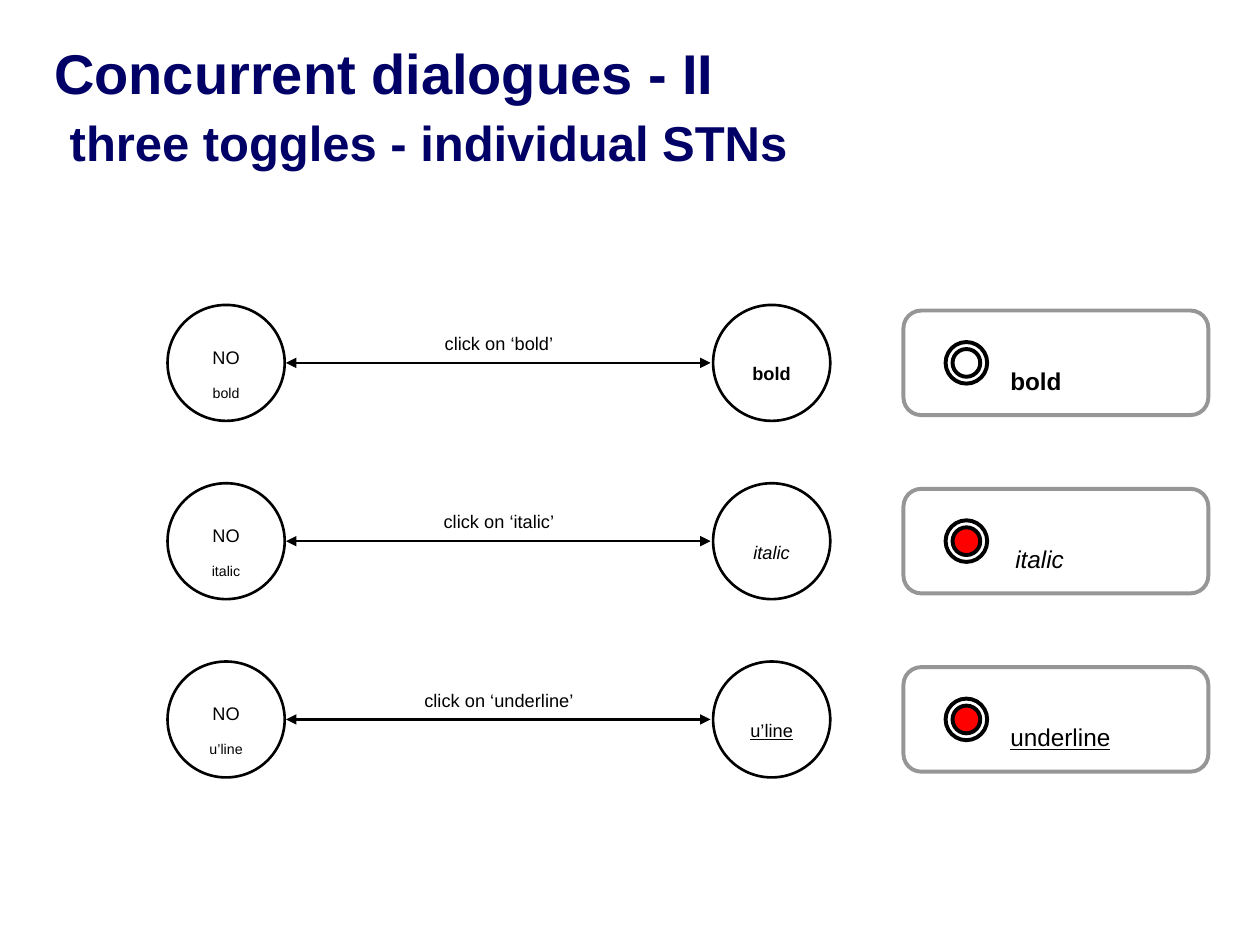
from lxml.etree import SubElement
from pptx import Presentation
from pptx.dml.color import RGBColor
from pptx.enum.shapes import MSO_CONNECTOR, MSO_SHAPE
from pptx.enum.text import MSO_ANCHOR, MSO_AUTO_SIZE, PP_ALIGN
from pptx.oxml.ns import qn
from pptx.util import Inches, Pt

NAVY = RGBColor(0x00, 0x00, 0x66)
BLACK = RGBColor(0x00, 0x00, 0x00)
WHITE = RGBColor(0xFF, 0xFF, 0xFF)
GREY = RGBColor(0x96, 0x96, 0x96)
RED = RGBColor(0xFF, 0x00, 0x00)

# Grid: 10 columns by 7.5 rows of square cells
COLUMNS, ROWS = 10, 7.5
FIRST_CENTRE, LAST_CENTRE = 2.88, 5.71
STATE_WIDTH, STATE_HEIGHT = 0.93, 0.92
OFF_LEFT, ON_LEFT = 1.33, 5.66
PANEL_LEFT, PANEL_WIDTH, PANEL_HEIGHT = 7.17, 2.42, 0.83
RADIO_CENTRE = 7.67
ARROW_CENTRE = 3.96

# Style, short name, full name, lamp colour, panel label (left, width), event width
TOGGLES = [
    ("bold", "bold", "bold", WHITE, (7.92, 0.9), 1.69),
    ("italic", "italic", "italic", RED, (7.96, 0.87), 1.72),
    ("underline", "u’line", "underline", RED, (7.92, 1.58), 2.24),
]


class DiagramSlide:
    font_name = "Arial"

    def __init__(self, deck):
        self.page = deck.slides.add_slide(deck.slide_layouts[5])
        self.cell = deck.slide_width / COLUMNS
        self.parent = self.page.shapes

    def place(self, *lengths):
        return [round(length * self.cell) for length in lengths]

    def start_group(self):
        self.parent = self.page.shapes.add_group_shape().shapes

    def add_span(self, para, text, size, color=BLACK, style=None, lowered=True):
        span = para.add_run()
        span.text = text
        font = span.font
        font.name, font.size = self.font_name, Pt(size)
        font.color.rgb = color
        if style:
            setattr(font, style, True)
        if lowered:
            span._r.get_or_add_rPr().set("baseline", "-25000")

    def title(self, heading, subheading):
        box = self.page.shapes.title
        box.left, box.top, box.width, box.height = self.place(0.33, 0.33, 9.42, 1.09)
        frame = box.text_frame
        frame.auto_size = MSO_AUTO_SIZE.NONE
        frame.vertical_anchor = MSO_ANCHOR.BOTTOM
        para = frame.paragraphs[0]
        para.alignment = PP_ALIGN.LEFT
        self.add_span(para, heading, 32, NAVY, "bold", lowered=False)
        para.add_line_break()
        self.add_span(para, " ", 32, NAVY, "bold", lowered=False)
        self.add_span(para, subheading, 28, NAVY, "bold", lowered=False)

    def outline(self, kind, left, top, width, height, line=BLACK, weight=2.25, fill=WHITE):
        shape = self.parent.add_shape(kind, *self.place(left, top, width, height))
        shape.shadow.inherit = False
        shape.fill.solid()
        shape.fill.fore_color.rgb = fill
        shape.line.color.rgb = line
        shape.line.width = Pt(weight)
        return shape

    def state(self, left, centre, lines, style=None):
        circle = self.outline(MSO_SHAPE.OVAL, left, centre - STATE_HEIGHT / 2,
                              STATE_WIDTH, STATE_HEIGHT, weight=1.5)
        frame = circle.text_frame
        frame.word_wrap = False
        frame.vertical_anchor = MSO_ANCHOR.MIDDLE
        for index, (text, size) in enumerate(lines):
            para = frame.add_paragraph() if index else frame.paragraphs[0]
            para.alignment = PP_ALIGN.CENTER
            self.add_span(para, text, size, style=style)

    def label(self, left, top, width, height, text, size, style=None, align=PP_ALIGN.LEFT):
        box = self.parent.add_textbox(*self.place(left, top, width, height))
        frame = box.text_frame
        frame.word_wrap = False
        frame.auto_size = MSO_AUTO_SIZE.SHAPE_TO_FIT_TEXT
        para = frame.paragraphs[0]
        para.alignment = align
        self.add_span(para, text, size, style=style)

    def double_arrow(self, start, end, centre):
        arrow = self.parent.add_connector(
            MSO_CONNECTOR.STRAIGHT, *self.place(start, centre, end, centre))
        arrow.line.color.rgb = BLACK
        arrow.line.width = Pt(1.5)
        line = arrow.line._get_or_add_ln()
        for end_tag in ("a:headEnd", "a:tailEnd"):
            SubElement(line, qn(end_tag)).set("type", "triangle")
        SubElement(arrow._element.spPr, qn("a:effectLst"))

    def radio_button(self, centre, lamp):
        for size, fill in ((0.33, WHITE), (0.22, lamp)):
            self.outline(MSO_SHAPE.OVAL, RADIO_CENTRE - size / 2,
                         centre - size / 2, size, size, fill=fill)

    def panel(self, centre, text, style, lamp, label_left, label_width):
        self.start_group()
        frame = self.outline(MSO_SHAPE.ROUNDED_RECTANGLE, PANEL_LEFT,
                             centre - PANEL_HEIGHT / 2, PANEL_WIDTH, PANEL_HEIGHT, GREY)
        frame.adjustments[0] = 0.17
        self.radio_button(centre, lamp)
        self.label(label_left, centre - 0.25, label_width, 0.5, text, 24, style)

    def transition(self, centre, short, full, style, event_width):
        self.start_group()
        self.state(OFF_LEFT, centre, [("NO", 18), (short, 14)])
        self.state(ON_LEFT, centre, [(short, 18)], style)
        self.double_arrow(OFF_LEFT + STATE_WIDTH + 0.01, ON_LEFT - 0.02, centre)
        self.label(ARROW_CENTRE - event_width / 2, centre - STATE_HEIGHT / 2,
                   event_width, 0.4, f"click on ‘{full}’", 18, align=PP_ALIGN.CENTER)


def main():
    deck = Presentation()
    deck.slide_width, deck.slide_height = Inches(COLUMNS), Inches(ROWS)
    diagram = DiagramSlide(deck)
    diagram.title("Concurrent dialogues - II", "three toggles - individual STNs")

    # One row per toggle: state network on the left, dialogue panel on the right
    pitch = (LAST_CENTRE - FIRST_CENTRE) / (len(TOGGLES) - 1)
    for row, (style, short, full, lamp, label_span, event_width) in enumerate(TOGGLES):
        centre = FIRST_CENTRE + row * pitch
        diagram.panel(centre, full, style, lamp, *label_span)
        diagram.transition(centre, short, full, style, event_width)

    deck.save("out.pptx")


if __name__ == "__main__":
    main()
